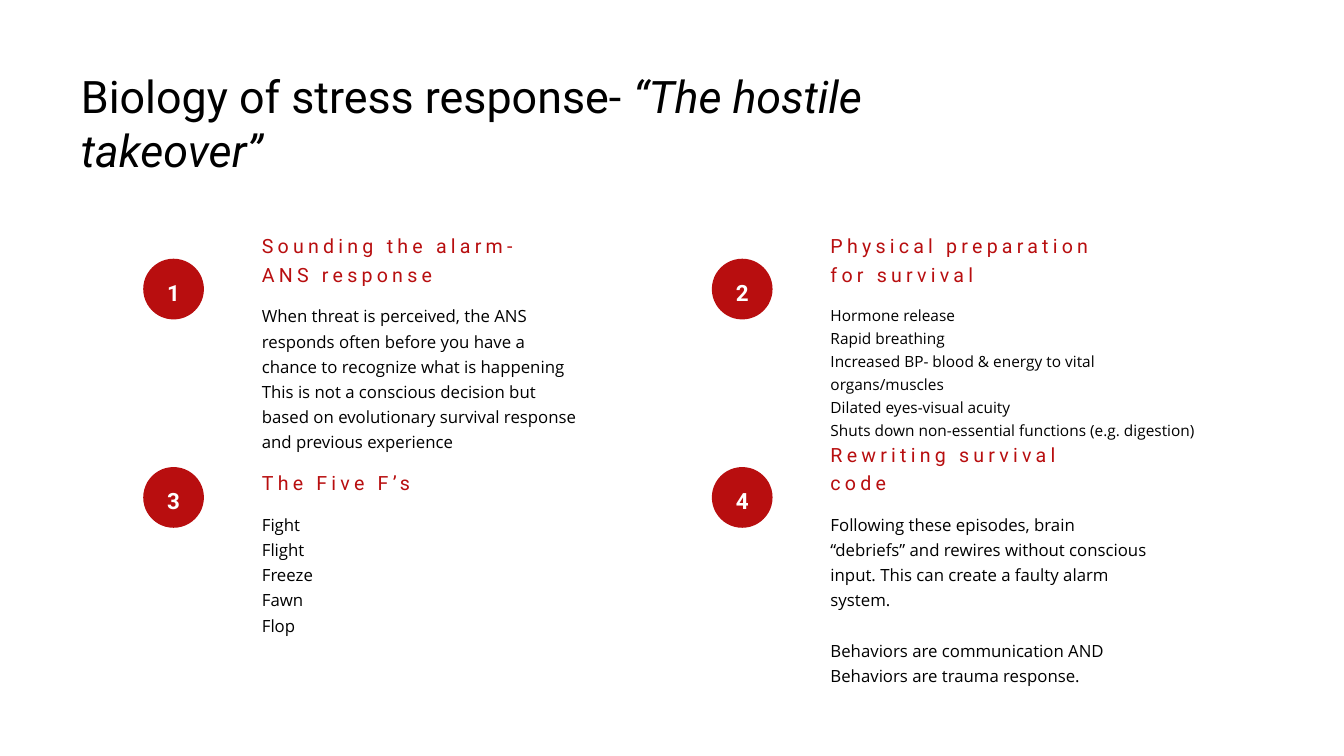
from pptx import Presentation
from pptx.dml.color import RGBColor
from pptx.enum.shapes import MSO_SHAPE
from pptx.enum.text import MSO_ANCHOR, MSO_AUTO_SIZE, PP_ALIGN
from pptx.util import Cm, Pt

TITLE = [("Biology of stress response- ", False), ("“The hostile takeover”", True)]

STEPS = [
    {
        "heading": "Sounding the alarm- ANS response",
        "groups": [[
            "When threat is perceived, the ANS responds often before you have a chance to recognize what is happening",
            "This is not a conscious decision but based on evolutionary survival response and previous experience",
        ]],
        "style": "body", "width": 8.38, "height": 3.81,
    },
    {
        "heading": "Physical preparation for survival",
        "groups": [[
            "Hormone release",
            "Rapid breathing",
            "Increased BP- blood & energy to vital organs/muscles",
            "Dilated eyes-visual acuity",
            "Shuts down non-essential functions (e.g. digestion)",
        ]],
        "style": "compact", "width": 9.7, "height": 2.9,
    },
    {
        "heading": "The Five F’s",
        "groups": [["Fight", "Flight", "Freeze", "Fawn", "Flop"]],
        "style": "body", "width": 8.38, "height": 3.15,
    },
    {
        "heading": "Rewriting survival code",
        "groups": [
            ["Following these episodes, brain “debriefs” and rewires without conscious input. "
             "This can create a faulty alarm system."],
            ["Behaviors are communication AND Behaviors are trauma response."],
        ],
        "style": "body", "width": 8.38, "height": 3.81,
    },
]

RED, BLACK, WHITE = (RGBColor.from_string(c) for c in ("B80E0F", "000000", "FFFFFF"))
THEME = {
    "title": {"font": {"name": "Roboto", "size": Pt(32)}, "color": BLACK,
              "paragraph": {"line_spacing": Pt(39)}},
    "heading": {"font": {"name": "Roboto", "size": Pt(14)}, "color": RED, "tracking": 3,
                "paragraph": {"line_spacing": 1.2}},
    "body": {"font": {"name": "Open Sans", "size": Pt(12)}, "color": BLACK,
             "paragraph": {"line_spacing": 1.25}},
    "compact": {"font": {"name": "Open Sans", "size": Pt(11)}, "color": BLACK,
                "paragraph": {"line_spacing": 1.25}},
    "badge": {"font": {"name": "Roboto", "size": Pt(16), "bold": True}, "color": WHITE, "tracking": 3,
              "paragraph": {"alignment": PP_ALIGN.CENTER}},
    "group_gap": Pt(18),
}
TEXT_FRAME = {"word_wrap": True, "auto_size": MSO_AUTO_SIZE.SHAPE_TO_FIT_TEXT,
              "margin_left": 0, "margin_top": 0, "margin_right": Cm(0.25), "margin_bottom": 0}

COLUMNS = 2
COLUMN_LEFTS = (6.6, 20.93)
ROW_PITCH = 5.25
BODY_TOP = 7.59
HEADING_TOP, HEADING_WIDTH, HEADING_HEIGHT = 5.81, 7.04, 1.4
BADGE_TOP, BADGE_OFFSET, BADGE_SIZE = 6.52, 2.99, 1.53


def apply(target, values):
    for attribute, value in values.items():
        setattr(target, attribute, value)


def write(paragraph, runs, style):
    apply(paragraph, style["paragraph"])
    for words, italic in runs:
        run = paragraph.add_run()
        run.text = words
        apply(run.font, {**style["font"], "italic": italic})
        run.font.color.rgb = style["color"]
        if "tracking" in style:
            run.font._element.set("spc", str(style["tracking"] * 100))


def add_text(slide, place, groups, style, anchor=MSO_ANCHOR.TOP):
    frame = slide.shapes.add_textbox(*map(Cm, place)).text_frame
    apply(frame, {**TEXT_FRAME, "vertical_anchor": anchor})
    paragraph = None
    for group in groups:
        for position, runs in enumerate(group):
            follows = paragraph is not None
            paragraph = frame.add_paragraph() if follows else frame.paragraphs[0]
            write(paragraph, runs, style)
            if follows and position == 0:
                paragraph.space_before = THEME["group_gap"]


def add_badge(slide, number, left, top):
    badge = slide.shapes.add_shape(MSO_SHAPE.OVAL, *map(Cm, (left, top, BADGE_SIZE, BADGE_SIZE)))
    badge.shadow.inherit = False
    badge.fill.solid()
    badge.fill.fore_color.rgb = RED
    badge.line.fill.background()
    badge.text_frame.vertical_anchor = MSO_ANCHOR.BOTTOM
    write(badge.text_frame.paragraphs[0], [(str(number), False)], THEME["badge"])


def add_step(slide, index, step):
    row, column = divmod(index, COLUMNS)
    left, down = COLUMN_LEFTS[column], row * ROW_PITCH
    groups = [[[(line, False)] for line in group] for group in step["groups"]]
    add_text(slide, (left, BODY_TOP + down, step["width"], step["height"]), groups, THEME[step["style"]])

    add_text(slide, (left, HEADING_TOP + down, HEADING_WIDTH, HEADING_HEIGHT),
             [[[(step["heading"], False)]]], THEME["heading"], MSO_ANCHOR.BOTTOM)
    add_badge(slide, index + 1, left - BADGE_OFFSET, BADGE_TOP + down)


def main():
    deck = Presentation()
    deck.slide_width, deck.slide_height = Cm(33.87), Cm(19.05)
    slide = deck.slides.add_slide(deck.slide_layouts[6])
    add_text(slide, (2.04, 1.7, 24.43, 2.75), [[TITLE]], THEME["title"])
    for index, step in enumerate(STEPS):
        add_step(slide, index, step)
    deck.save("out.pptx")


if __name__ == "__main__":
    main()
